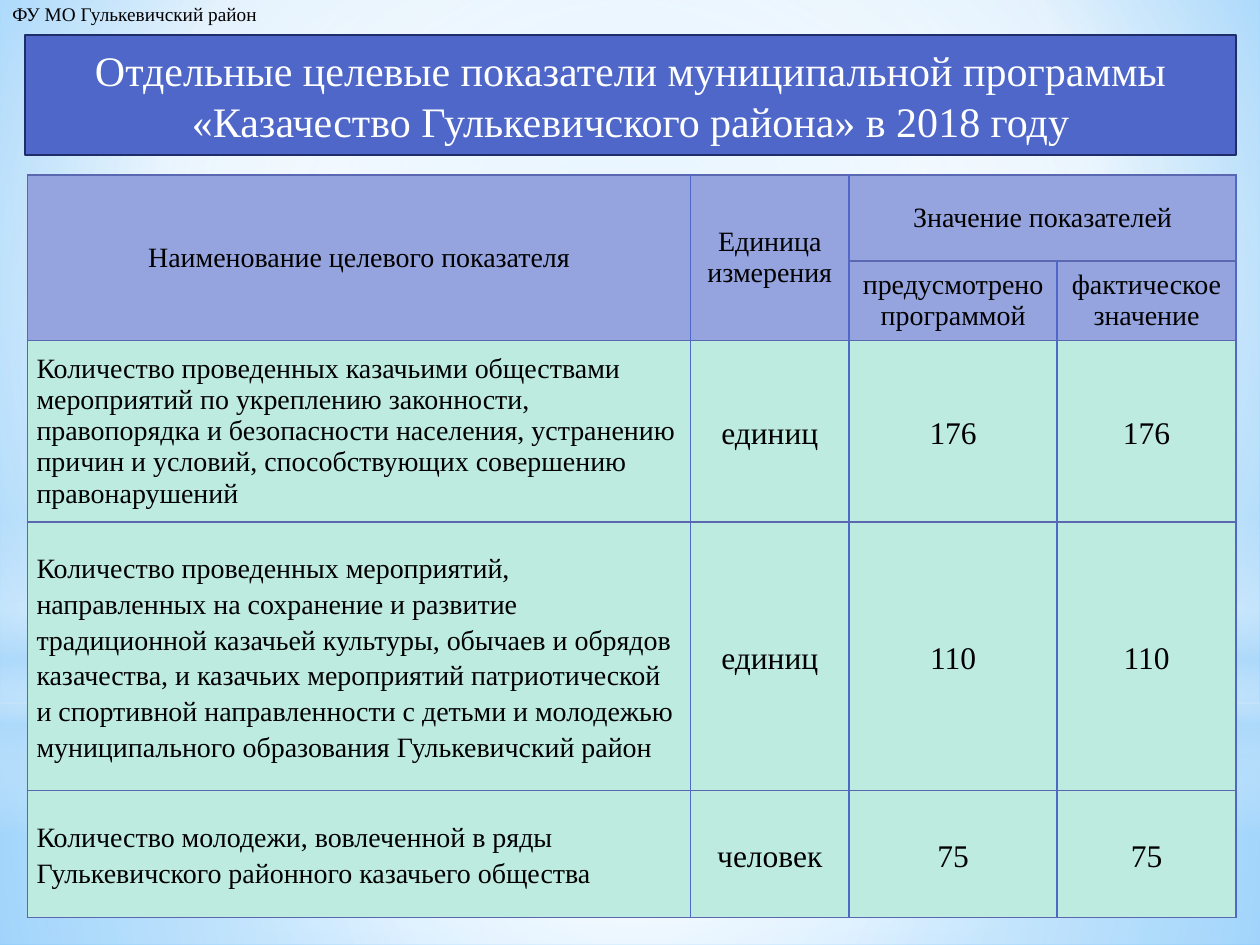
from lxml import etree
from pptx import Presentation
from pptx import util as u
from pptx.dml.color import RGBColor
from pptx.enum import shapes, text
from pptx.oxml.ns import nsdecls, qn

W, H = 10, 7.5
FONT = "Times New Roman"
UNIT = "ФУ МО Гулькевичский район"
TITLE = ("Отдельные целевые показатели муниципальной программы "
         "«Казачество Гулькевичского района» в 2018 году")
HEAD = [
    ["Наименование целевого показателя", "Единица\nизмерения", "Значение показателей", ""],
    ["", "", "предусмотрено программой", "фактическое значение"],
]
ROWS = [
    ["Количество проведенных казачьими обществами мероприятий по укреплению "
     "законности, правопорядка и безопасности населения, устранению причин и "
     "условий, способствующих совершению правонарушений", "единиц", "176", "176"],
    ["Количество проведенных мероприятий, направленных на сохранение и развитие "
     "традиционной казачьей культуры, обычаев и обрядов казачества, и казачьих "
     "мероприятий патриотической и спортивной направленности с детьми и молодежью "
     "муниципального образования Гулькевичский район", "единиц", "110", "110"],
    ["Количество молодежи, вовлеченной в ряды Гулькевичского районного "
     "казачьего общества", "человек", "75", "75"],
]
COLS = [5.26, 1.26, 1.65, 1.42]
TALL = [0.68, 0.63, 1.44, 2.13, 1.01]
MERGES = [(0, 0, 1, 0), (0, 1, 1, 1), (0, 2, 0, 3)]
EDGES = [("L", "4E67C8"), ("R", "4E67C8"), ("T", "5968B0"), ("B", "5968B0")]

RECT, OVAL = shapes.MSO_SHAPE.RECTANGLE, shapes.MSO_SHAPE.OVAL
MID = (50, 50, 50, 50)
BACK = [(0, "9ED5FF", 100), (60, "FFFFFF", 100), (100, "5BB9FF", 100)]
GLOWS = [
    (RECT, 5.58, 1.92, MID, [(0, "FFFFFF", 91), (37, "FFFFFF", 76), (100, "B4DCFA", 79)]),
    (RECT, 0, 5.58, MID, [(0, "FFFFFF", 89), (48, "FFFFFF", 62), (100, "B4DCFA", 79)]),
    (RECT, 4.12, 2.5, None, [(0, "FFFFFF", 0), (29, "FFFFFF", 30), (45, "B4DCFA", 40),
                             (55, "FFFFFF", 26), (65, "B4DCFA", 60), (100, "FFFFFF", 0)]),
    (OVAL, 1.75, 5.58, MID, [(0, "FFFFFF", 100), (56, "FFFFFF", 0)]),
]


def color(code):
    return RGBColor.from_string(code)


def box(*sides):
    return [u.Inches(side) for side in sides]


def blend(stops, focus):
    marks = "".join(
        f'<a:gs pos="{pos * 1000}"><a:srgbClr val="{code}">'
        f'<a:alpha val="{alpha * 1000}"/></a:srgbClr></a:gs>'
        for pos, code, alpha in stops)
    if focus:
        l, t, r, b = [side * 1000 for side in focus]
        way = (f'<a:path path="circle"><a:fillToRect l="{l}" t="{t}" r="{r}" b="{b}"/>'
               '</a:path>')
    else:
        way = '<a:lin ang="5400000" scaled="0"/>'
    return etree.fromstring(
        f'<a:gradFill {nsdecls("a")} rotWithShape="1"><a:gsLst>{marks}</a:gsLst>{way}</a:gradFill>')


def recolor(fill, stops, focus):
    fill.gradient()
    old = fill._xPr.find(qn("a:gradFill"))
    old.getparent().replace(old, blend(stops, focus))


def style(frame, size, code="000000", align=None, space=None):
    for para in frame.paragraphs:
        para.alignment = align
        para.line_spacing = space
        for run in para.runs:
            run.font.name, run.font.size = FONT, u.Pt(size)
            run.font.color.rgb = color(code)


def border(cell):
    props = cell._tc.get_or_add_tcPr()
    for spot, (side, code) in enumerate(EDGES):
        props.insert(spot, etree.fromstring(
            f'<a:ln{side} {nsdecls("a")} w="12700"><a:solidFill>'
            f'<a:srgbClr val="{code}"/></a:solidFill></a:ln{side}>'))


def paint(slide):
    recolor(slide.background.fill, BACK, (20, 10, 20, 60))
    for kind, top, tall, focus, stops in GLOWS:
        glow = slide.shapes.add_shape(kind, *box(0, top, W, tall))
        glow.shadow.inherit = False
        glow.line.fill.background()
        recolor(glow.fill, stops, focus)


def label(slide):
    note = slide.shapes.add_textbox(*box(0, -0.03, 2.18, 0.29))
    note.text_frame.word_wrap = False
    note.text_frame.text = UNIT
    style(note.text_frame, 11)


def table(slide):
    data = HEAD + ROWS
    grid = slide.shapes.add_table(
        len(data), len(COLS), *box(0.22, 1.39, sum(COLS), sum(TALL))).table
    for col, wide in zip(grid.columns, COLS):
        col.width = u.Inches(wide)
    for row, tall in zip(grid.rows, TALL):
        row.height = u.Inches(tall)
    for y, line in enumerate(data):
        for x, words in enumerate(line):
            cell = grid.cell(y, x)
            top = y < len(HEAD)
            cell.text_frame.text = words
            cell.vertical_anchor = text.MSO_ANCHOR.MIDDLE
            cell.fill.solid()
            cell.fill.fore_color.rgb = color("95A4DE" if top else "BEEBDF")
            if not top:
                cell.margin_left = cell.margin_right = u.Inches(0.07)
                cell.margin_top = cell.margin_bottom = 0
            style(cell.text_frame, 16 if top or x == 0 else 18,
                  align=text.PP_ALIGN.CENTER if top or x else text.PP_ALIGN.LEFT,
                  space=None if top or (y, x) == (len(HEAD), 0) else 1.15)
            border(cell)
    for y, x, low, right in MERGES:
        grid.cell(y, x).merge(grid.cell(low, right))


def banner(slide):
    title = slide.shapes.title
    title.left, title.top, title.width, title.height = box(0.2, 0.28, 9.61, 0.95)
    title._element.spPr.insert(1, etree.fromstring(
        f'<a:prstGeom {nsdecls("a")} prst="roundRect"><a:avLst/></a:prstGeom>'))
    title.fill.solid()
    title.fill.fore_color.rgb = color("4E67C8")
    title.line.color.rgb = color("1F2E69")
    title.line.width = u.Pt(1.25)
    frame = title.text_frame
    frame.text = TITLE
    frame.word_wrap = True
    frame.auto_size = text.MSO_AUTO_SIZE.NONE
    frame.vertical_anchor = text.MSO_ANCHOR.MIDDLE
    style(frame, 24, "FFFFFF", text.PP_ALIGN.CENTER)
    slide.shapes._spTree.append(title._element)


def main():
    deck = Presentation()
    deck.slide_width, deck.slide_height = box(W, H)
    slide = deck.slides.add_slide(deck.slide_layouts[5])
    paint(slide)
    label(slide)
    table(slide)
    banner(slide)
    deck.save("out.pptx")


if __name__ == "__main__":
    main()
